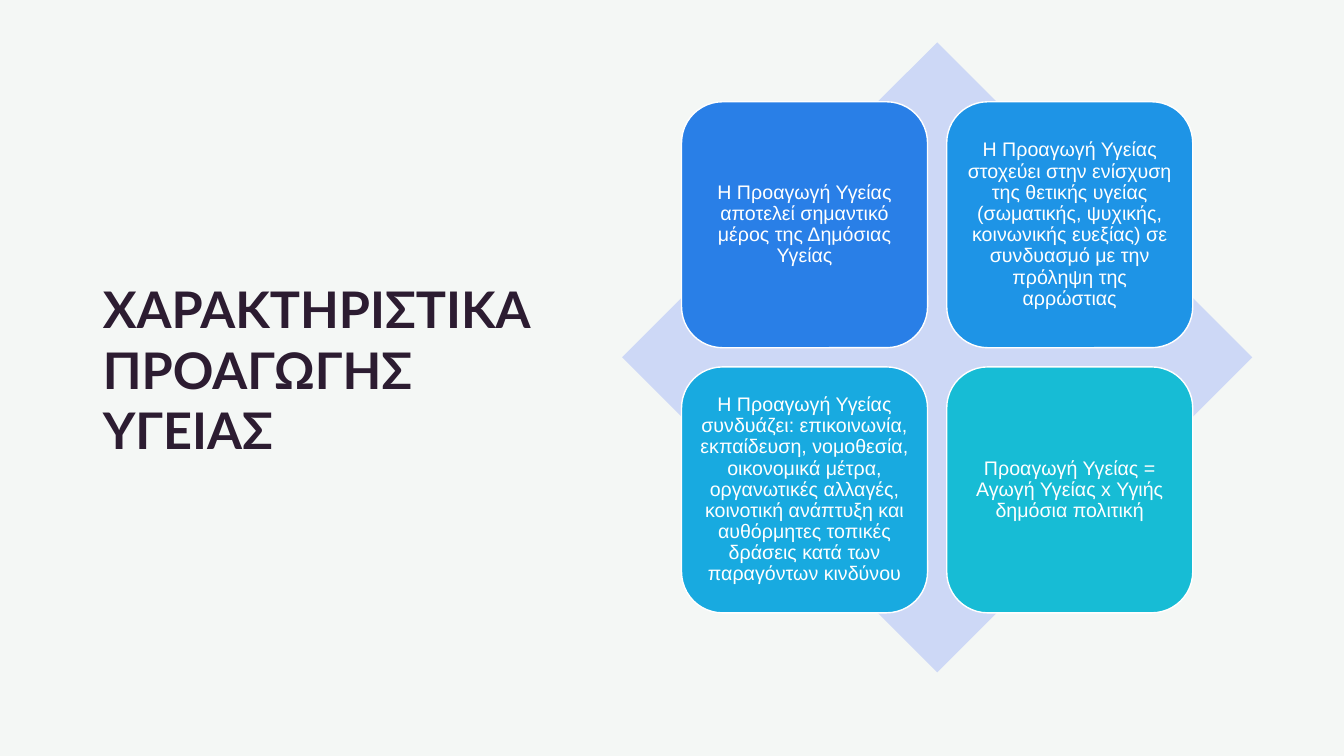
from pptx import Presentation
from pptx.dml.color import RGBColor
from pptx.enum.shapes import MSO_SHAPE
from pptx.enum.text import MSO_ANCHOR, MSO_AUTO_SIZE, PP_ALIGN
from pptx.util import Inches, Pt

DIAMOND, ROUNDED = MSO_SHAPE.DIAMOND, MSO_SHAPE.ROUNDED_RECTANGLE
MIDDLE = MSO_ANCHOR.MIDDLE
LEFT, CENTER = PP_ALIGN.LEFT, PP_ALIGN.CENTER
NO_AUTOFIT = MSO_AUTO_SIZE.NONE

WHITE = RGBColor(0xFF, 0xFF, 0xFF)
PALE_GREY = RGBColor(0xF4, 0xF7, 0xF5)
PLUM = RGBColor(0x2C, 0x1C, 0x31)
LAVENDER = RGBColor(0xCD, 0xD8, 0xF6)

TITLE = "ΧΑΡΑΚΤΗΡΙΣΤΙΚΑ ΠΡΟΑΓΩΓΗΣ ΥΓΕΙΑΣ"
CHARACTERISTICS = [
    ("Η Προαγωγή Υγείας αποτελεί σημαντικό μέρος της Δημόσιας Υγείας",
     RGBColor(0x29, 0x7F, 0xE7)),
    ("Η Προαγωγή Υγείας στοχεύει στην ενίσχυση της θετικής υγείας "
     "(σωματικής, ψυχικής, κοινωνικής ευεξίας) σε συνδυασμό με την "
     "πρόληψη της αρρώστιας",
     RGBColor(0x1E, 0x94, 0xE6)),
    ("Η Προαγωγή Υγείας συνδυάζει: επικοινωνία, εκπαίδευση, νομοθεσία, "
     "οικονομικά μέτρα, οργανωτικές αλλαγές, κοινοτική ανάπτυξη και "
     "αυθόρμητες τοπικές δράσεις κατά των παραγόντων κινδύνου",
     RGBColor(0x18, 0xAA, 0xE0)),
    ("Προαγωγή Υγείας = Αγωγή Υγείας x Υγιής δημόσια πολιτική",
     RGBColor(0x17, 0xBC, 0xD5)),
]

MATRIX_LEFT, MATRIX_TOP, MATRIX_SIZE = 6.17, 0.42, 6.25
CARD_OFFSET, CARD_SIZE, CARD_PITCH = 0.59, 2.44, 2.63
CARD_INSET = Inches(0.06)


def format_text(frame, text, font_name, size, color, align, bold=False):
    """Write one vertically centred paragraph into a text frame."""
    frame.text = text
    frame.word_wrap = True
    frame.auto_size = NO_AUTOFIT
    frame.vertical_anchor = MIDDLE
    paragraph = frame.paragraphs[0]
    paragraph.alignment = align
    font = paragraph.runs[0].font
    font.name, font.size, font.bold = font_name, Pt(size), bold
    font.color.rgb = color
    return paragraph


def add_title(slide):
    """Place and format the slide title."""
    title = slide.shapes.title
    title.left, title.top = Inches(0.92), Inches(0.61)
    title.width, title.height = Inches(4.8), Inches(6.1)
    format_text(title.text_frame, TITLE, "Lato", 36, PLUM, LEFT, bold=True)


def add_filled_shape(shapes, kind, left, top, size, color):
    """Add a square-proportioned shape with a plain fill and no shadow."""
    shape = shapes.add_shape(kind, Inches(left), Inches(top), Inches(size), Inches(size))
    shape.shadow.inherit = False
    shape.fill.solid()
    shape.fill.fore_color.rgb = color
    return shape


def add_card(shapes, index, text, color):
    """Add one characteristic at its place in the two-by-two matrix."""
    row, column = divmod(index, 2)
    left = MATRIX_LEFT + CARD_OFFSET + column * CARD_PITCH
    top = MATRIX_TOP + CARD_OFFSET + row * CARD_PITCH
    card = add_filled_shape(shapes, ROUNDED, left, top, CARD_SIZE, color)
    card.line.color.rgb = WHITE
    card.line.width = Pt(1)
    frame = card.text_frame
    frame.margin_left = frame.margin_right = CARD_INSET
    frame.margin_top = frame.margin_bottom = CARD_INSET
    paragraph = format_text(frame, text, "Arial", 14, WHITE, CENTER)
    paragraph.line_spacing = 0.9


def add_matrix(slide):
    """Group the diamond backdrop with its four cards."""
    shapes = slide.shapes.add_group_shape().shapes
    diamond = add_filled_shape(shapes, DIAMOND, MATRIX_LEFT, MATRIX_TOP, MATRIX_SIZE, LAVENDER)
    diamond.line.fill.background()
    for index, (text, color) in enumerate(CHARACTERISTICS):
        add_card(shapes, index, text, color)


def main():
    """Build and save the presentation."""
    presentation = Presentation()
    presentation.slide_width = Inches(13.33)
    presentation.slide_height = Inches(7.5)
    slide = presentation.slides.add_slide(presentation.slide_layouts[5])
    slide.background.fill.solid()
    slide.background.fill.fore_color.rgb = PALE_GREY
    add_title(slide)
    add_matrix(slide)
    presentation.save("out.pptx")


if __name__ == "__main__":
    main()
